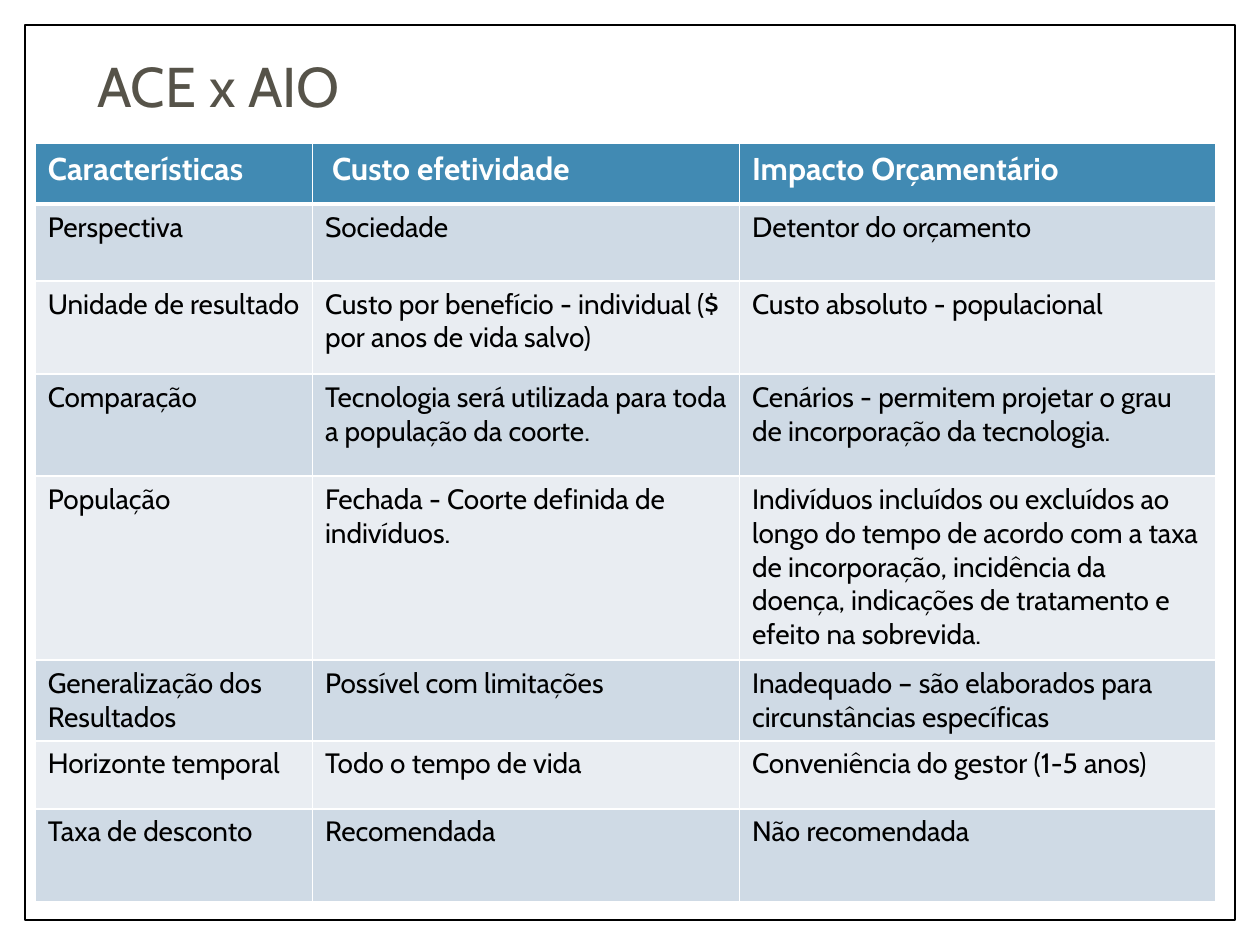
from lxml.etree import SubElement
from pptx import Presentation
from pptx.dml.color import RGBColor
from pptx.enum.shapes import MSO_SHAPE
from pptx.enum.text import MSO_ANCHOR, MSO_AUTO_SIZE, PP_ALIGN
from pptx.oxml.ns import qn
from pptx.util import Inches, Pt

FONT = "Cabin"
WHITE = RGBColor(0xFF, 0xFF, 0xFF)
BLACK = RGBColor(0x00, 0x00, 0x00)
TITLE_GREY = RGBColor(0x56, 0x53, 0x49)
HEADER_BLUE = RGBColor(0x41, 0x8A, 0xB3)
BANDS = (RGBColor(0xCF, 0xDA, 0xE5), RGBColor(0xE9, 0xED, 0xF2))

COLUMN_WIDTHS = (2.2, 3.39, 3.78)
ROW_HEIGHTS = (0.48, 0.61, 0.74, 0.81, 1.46, 0.64, 0.54, 0.74)
COMPARISON = (
    ("Características", " Custo efetividade", "Impacto Orçamentário"),
    ("Perspectiva", "Sociedade", "Detentor do orçamento"),
    ("Unidade de resultado",
     "Custo por benefício - individual ($ por anos de vida salvo)",
     "Custo absoluto - populacional"),
    ("Comparação",
     "Tecnologia será utilizada para toda a população da coorte.",
     "Cenários - permitem projetar o grau de incorporação da tecnologia."),
    ("População",
     "Fechada - Coorte definida de indivíduos.",
     "Indivíduos incluídos ou excluídos ao longo do tempo de acordo com a taxa "
     "de incorporação, incidência da doença, indicações de tratamento e efeito "
     "na sobrevida."),
    ("Generalização dos Resultados",
     "Possível com limitações",
     "Inadequado – são elaborados para circunstâncias específicas"),
    ("Horizonte temporal", "Todo o tempo de vida",
     "Conveniência do gestor (1-5 anos)"),
    ("Taxa de desconto", "Recomendada", "Não recomendada"),
)


def write_text(text_frame, text, size=16, color=BLACK, bold=False):
    paragraph = text_frame.paragraphs[0]
    paragraph.alignment = PP_ALIGN.LEFT
    run = paragraph.add_run()
    run.text = text
    run.font.name = FONT
    run.font.size = Pt(size)
    run.font.bold = bold
    run.font.color.rgb = color


def set_borders(cell, color=WHITE, **widths):
    """Draw the cell's four borders, 1 pt unless a side is given."""
    properties = cell._tc.get_or_add_tcPr()
    for side in ("L", "R", "T", "B"):
        width = Pt(widths.get(side, 1))
        line = SubElement(properties, qn(f"a:ln{side}"), w=str(width))
        fill = SubElement(line, qn("a:solidFill"))
        SubElement(fill, qn("a:srgbClr"), val=str(color))


def add_frame(slide, left, top, width, height):
    frame = slide.shapes.add_shape(MSO_SHAPE.RECTANGLE, left, top, width, height)
    frame.shadow.inherit = False
    frame.fill.solid()
    frame.fill.fore_color.rgb = WHITE
    frame.line.color.rgb = BLACK
    frame.line.width = Pt(1)


def add_comparison(slide, left, top, width, height):
    table = slide.shapes.add_table(
        len(COMPARISON), len(COLUMN_WIDTHS), left, top, width, height).table
    for column, share in zip(table.columns, COLUMN_WIDTHS):
        column.width = int(width * share / sum(COLUMN_WIDTHS))
    for row, share in zip(table.rows, ROW_HEIGHTS):
        row.height = int(height * share / sum(ROW_HEIGHTS))

    for row_index, texts in enumerate(COMPARISON):
        is_header = row_index == 0
        for column_index, text in enumerate(texts):
            cell = table.cell(row_index, column_index)
            # The header is set off by a thicker rule
            if is_header:
                set_borders(cell, B=3)
            else:
                set_borders(cell, T=3 if row_index == 1 else 1)
            cell.fill.solid()
            if is_header:
                cell.fill.fore_color.rgb = HEADER_BLUE
                write_text(cell.text_frame, text, size=18, color=WHITE, bold=True)
            else:
                cell.fill.fore_color.rgb = BANDS[(row_index - 1) % 2]
                write_text(cell.text_frame, text)


def place_title(slide, left, top, width, height):
    title = slide.shapes.title
    title.left, title.top, title.width, title.height = left, top, width, height
    title.text_frame.word_wrap = True
    title.text_frame.auto_size = MSO_AUTO_SIZE.NONE
    title.text_frame.vertical_anchor = MSO_ANCHOR.TOP
    write_text(title.text_frame, "ACE x AIO", size=32, color=TITLE_GREY)
    # Bring the title in front of the frame
    title.element.getparent().append(title.element)


def main():
    presentation = Presentation()
    presentation.slide_width = Inches(10)
    presentation.slide_height = Inches(7.5)
    slide = presentation.slides.add_slide(presentation.slide_layouts[5])

    add_frame(slide, Inches(0.2), Inches(0.2), Inches(9.6), Inches(7.1))
    add_comparison(slide, Inches(0.28), Inches(1.14),
                   Inches(sum(COLUMN_WIDTHS)), Inches(sum(ROW_HEIGHTS)))
    place_title(slide, Inches(0.67), Inches(0.36), Inches(8.5), Inches(0.86))

    presentation.save("out.pptx")


if __name__ == "__main__":
    main()
